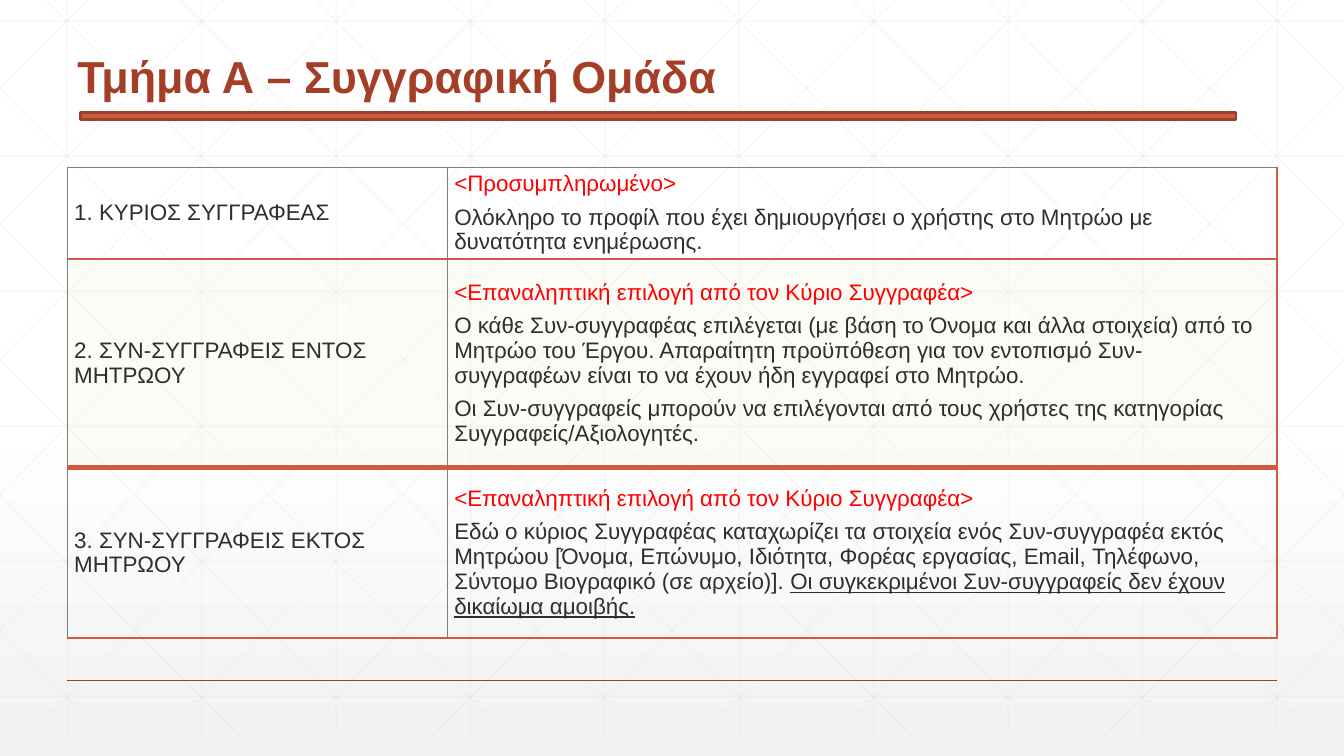
from lxml import etree
from pptx import Presentation
from pptx.dml.color import RGBColor
from pptx.enum.shapes import MSO_CONNECTOR, MSO_SHAPE
from pptx.enum.text import MSO_ANCHOR, PP_ALIGN
from pptx.oxml.ns import qn
from pptx.util import Inches, Pt

STRAIGHT = MSO_CONNECTOR.STRAIGHT
RECTANGLE = MSO_SHAPE.RECTANGLE
MIDDLE = MSO_ANCHOR.MIDDLE
LEFT = PP_ALIGN.LEFT

WHITE = RGBColor(0xFF, 0xFF, 0xFF)
PALE_GREY = RGBColor(0xF2, 0xF2, 0xF2)
GRID_GREY = RGBColor(0xD8, 0xD8, 0xD8)
BORDER_GREY = RGBColor(0x80, 0x80, 0x80)
ORANGE = RGBColor(0xD1, 0x5A, 0x3E)
RUST = RGBColor(0xA4, 0x3E, 0x27)
DARK_RUST = RGBColor(0x98, 0x41, 0x2D)
CREAM = RGBColor(0xF0, 0xF2, 0xD3)
RED = RGBColor(0xFF, 0x00, 0x00)
INK = RGBColor(0x2D, 0x2E, 0x2D)

FONT = "Arial"
WIDTH, HEIGHT = 13.33, 7.5
STEP = 4 / 3
MARGIN = STEP / 2
GRID_TOP, GRID_BOTTOM = -0.21, 7.29
DIAGONAL_RUN = 7.45
COLUMNS = (3.77, 8.23)
ROWS = (0.91, 2.07, 1.69)

REPEATED_CHOICE = "<Επαναληπτική επιλογή από τον Κύριο Συγγραφέα>"
# Each row: label, red hint, paragraphs made of (text, underlined) spans
SECTIONS = (
    ("1. ΚΥΡΙΟΣ ΣΥΓΓΡΑΦΕΑΣ", "<Προσυμπληρωμένο>", [
        [("Ολόκληρο το προφίλ που έχει δημιουργήσει ο χρήστης στο Μητρώο με "
          "δυνατότητα ενημέρωσης.", False)]]),
    ("2. ΣΥΝ-ΣΥΓΓΡΑΦΕΙΣ ΕΝΤΟΣ ΜΗΤΡΩΟΥ", REPEATED_CHOICE, [
        [("Ο κάθε Συν-συγγραφέας επιλέγεται (με βάση το Όνομα και άλλα στοιχεία) "
          "από το Μητρώο του Έργου. Απαραίτητη προϋπόθεση για τον εντοπισμό "
          "Συν-συγγραφέων είναι το να έχουν ήδη εγγραφεί στο Μητρώο.", False)],
        [("Οι Συν-συγγραφείς μπορούν να επιλέγονται από τους χρήστες της "
          "κατηγορίας Συγγραφείς/Αξιολογητές.", False)]]),
    ("3. ΣΥΝ-ΣΥΓΓΡΑΦΕΙΣ ΕΚΤΟΣ ΜΗΤΡΩΟΥ", REPEATED_CHOICE, [
        [("Εδώ ο κύριος Συγγραφέας καταχωρίζει τα στοιχεία ενός Συν-συγγραφέα "
          "εκτός Μητρώου [Όνομα, Επώνυμο, Ιδιότητα, Φορέας εργασίας, Email, "
          "Τηλέφωνο, Σύντομο Βιογραφικό (σε αρχείο)]. ", False),
         ("Οι συγκεκριμένοι Συν-συγγραφείς δεν έχουν δικαίωμα αμοιβής.", True)]]),
)


def set_all(target, values):
    for name, value in values.items():
        setattr(target, name, value)


def set_alpha(fill_parent, percent):
    color = next(fill_parent.iter(qn("a:srgbClr")))
    etree.SubElement(color, qn("a:alpha"), val=str(percent * 1000))


def add_line(shapes, start, end, color, points, alpha=100):
    line = shapes.add_connector(STRAIGHT, *(Inches(v) for v in (*start, *end)))
    line.line.color.rgb = color
    line.line.width = Pt(points)
    if alpha < 100:
        set_alpha(line.line._ln, alpha)
    etree.SubElement(line._element.spPr, qn("a:effectLst"))


def diagonal(index):
    """Ends of a falling diagonal, cut at the left and right page edges."""
    x = 0.25 + index * STEP
    slope = (GRID_BOTTOM - GRID_TOP) / DIAGONAL_RUN
    ends = (max(x, 0), min(x + DIAGONAL_RUN, WIDTH))
    return [(end, GRID_TOP + (end - x) * slope) for end in ends]


def add_background(page):
    fill = page.background.fill
    fill.gradient()
    fill.gradient_angle = 270
    for stop, position, color in zip(fill.gradient_stops, (0.53, 1), (WHITE, PALE_GREY)):
        stop.position = position
        stop.color.rgb = color

    columns = [MARGIN + i * STEP for i in range(10)]
    levels = [0.21 + i * 1.34 for i in range(6)]
    falling = [diagonal(i) for i in range(-5, 10)]
    rising = [[(WIDTH - x, y) for x, y in ends] for ends in falling]
    segments = [((x, GRID_TOP), (x, GRID_BOTTOM)) for x in columns]
    segments += [((0, y), (WIDTH, y)) for y in levels]
    grid = page.shapes.add_group_shape()
    for start, end in segments + falling + rising:
        add_line(grid.shapes, start, end, GRID_GREY, 0.75, 24)


def add_title(page, text):
    title = page.shapes.title
    page.shapes._spTree.append(title._element)
    set_all(title, dict(left=Inches(MARGIN), top=Inches(0.23),
                        width=Inches(12), height=Inches(1.11)))
    title.text_frame.vertical_anchor = MIDDLE
    para = title.text_frame.paragraphs[0]
    set_all(para, dict(alignment=LEFT, line_spacing=0.9))
    add_span(para, text, RUST, size=Pt(32), bold=True)


def add_title_bar(page):
    bar = page.shapes.add_shape(
        RECTANGLE, Inches(0.8), Inches(1.12), Inches(11.46), Inches(0.07))
    bar.shadow.inherit = False
    bar.fill.solid()
    bar.fill.fore_color.rgb = ORANGE
    bar.line.color.rgb = DARK_RUST
    bar.line.width = Pt(2)


def add_span(para, text, color, **format_values):
    span = para.add_run()
    span.text = text
    set_all(span.font, dict(name=FONT, size=Pt(16), bold=False) | format_values)
    span.font.color.rgb = color


def set_borders(cell, borders):
    """Borders are (colour, points) pairs: left, right, top, bottom."""
    properties = cell._tc.get_or_add_tcPr()
    for index, (side, (color, points)) in enumerate(zip("LRTB", borders)):
        line = etree.Element(qn(f"a:ln{side}"), w=str(Pt(points)))
        fill = etree.SubElement(line, qn("a:solidFill"))
        etree.SubElement(fill, qn("a:srgbClr"), val=str(color))
        properties.insert(index, line)


def format_cell(cell, row, column):
    set_all(cell, dict(vertical_anchor=MIDDLE, margin_left=Inches(0.07),
                       margin_right=Inches(0.07), margin_top=0, margin_bottom=0))
    if row == 1:
        cell.fill.solid()
        cell.fill.fore_color.rgb = CREAM
        set_alpha(cell._tc.tcPr, 20)
    else:
        cell.fill.background()
    thin = (BORDER_GREY, 0.75)
    levels = (thin, (ORANGE, 2), (ORANGE, 4), (ORANGE, 1))
    sides = (thin, thin, (ORANGE, 1.5))
    set_borders(cell, (*sides[column:column + 2], *levels[row:row + 2]))


def add_sections(page):
    table = page.shapes.add_table(
        len(ROWS), len(COLUMNS), Inches(MARGIN), Inches(1.66),
        Inches(sum(COLUMNS)), Inches(sum(ROWS))).table
    set_all(table, dict(first_row=False, horz_banding=False))
    for column, width in zip(table.columns, COLUMNS):
        column.width = Inches(width)
    for row, height in zip(table.rows, ROWS):
        row.height = Inches(height)
    for row, (label, hint, paragraphs) in enumerate(SECTIONS):
        label_cell, detail_cell = table.cell(row, 0), table.cell(row, 1)
        format_cell(label_cell, row, 0)
        format_cell(detail_cell, row, 1)
        add_span(label_cell.text_frame.paragraphs[0], label, INK)
        add_span(detail_cell.text_frame.paragraphs[0], hint, RED)
        for spans in paragraphs:
            para = detail_cell.text_frame.add_paragraph()
            para.space_before = Pt(6)
            for text, underlined in spans:
                add_span(para, text, INK, underline=underlined)


def main():
    deck = Presentation()
    set_all(deck, dict(slide_width=Inches(WIDTH), slide_height=Inches(HEIGHT)))
    page = deck.slides.add_slide(deck.slide_layouts[5])
    add_background(page)
    add_line(page.shapes, (MARGIN, 6.75), (MARGIN + 12, 6.75), RUST, 1)
    add_title_bar(page)
    add_title(page, "Τμήμα Α – Συγγραφική Ομάδα")
    add_sections(page)
    deck.save("out.pptx")


if __name__ == "__main__":
    main()
